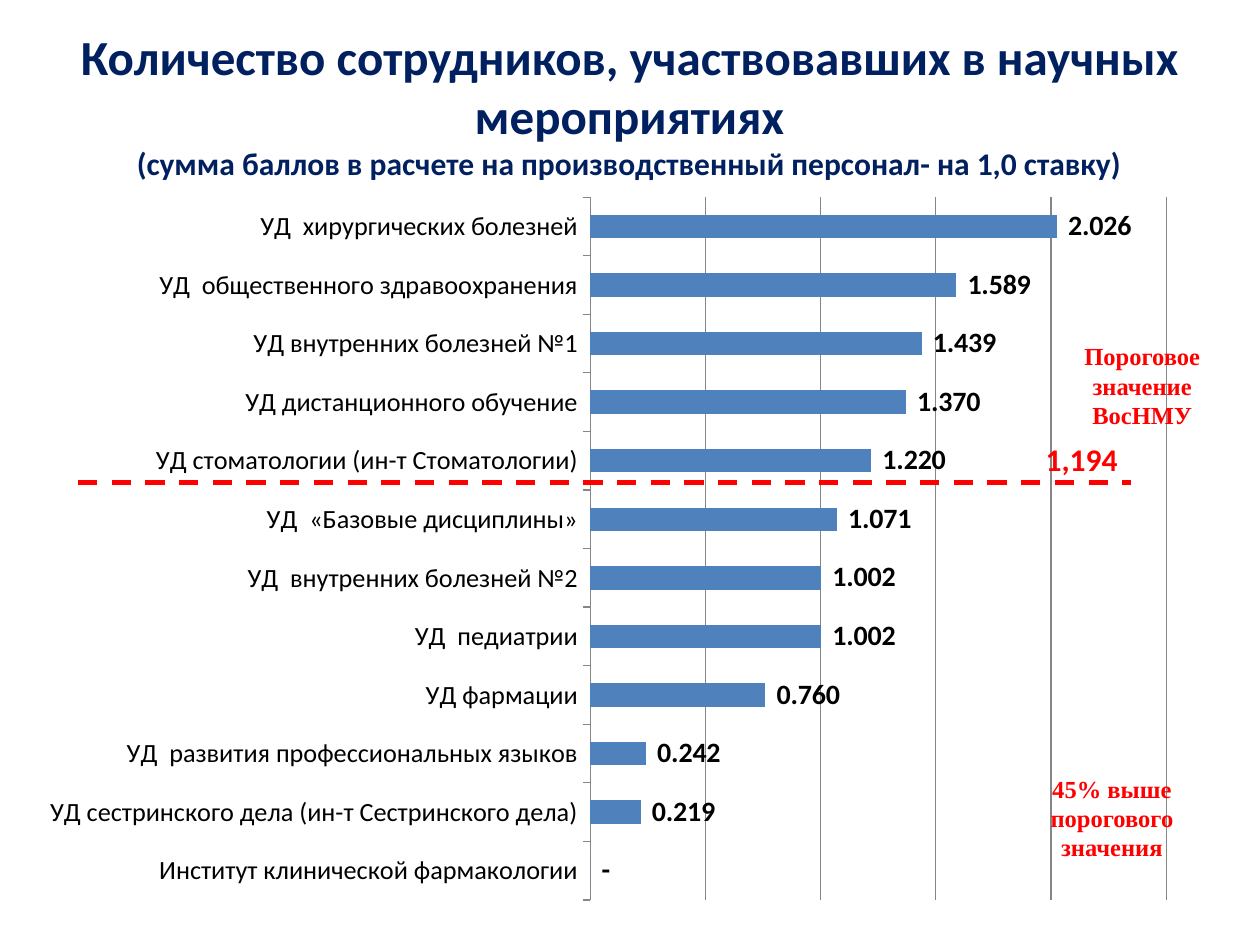
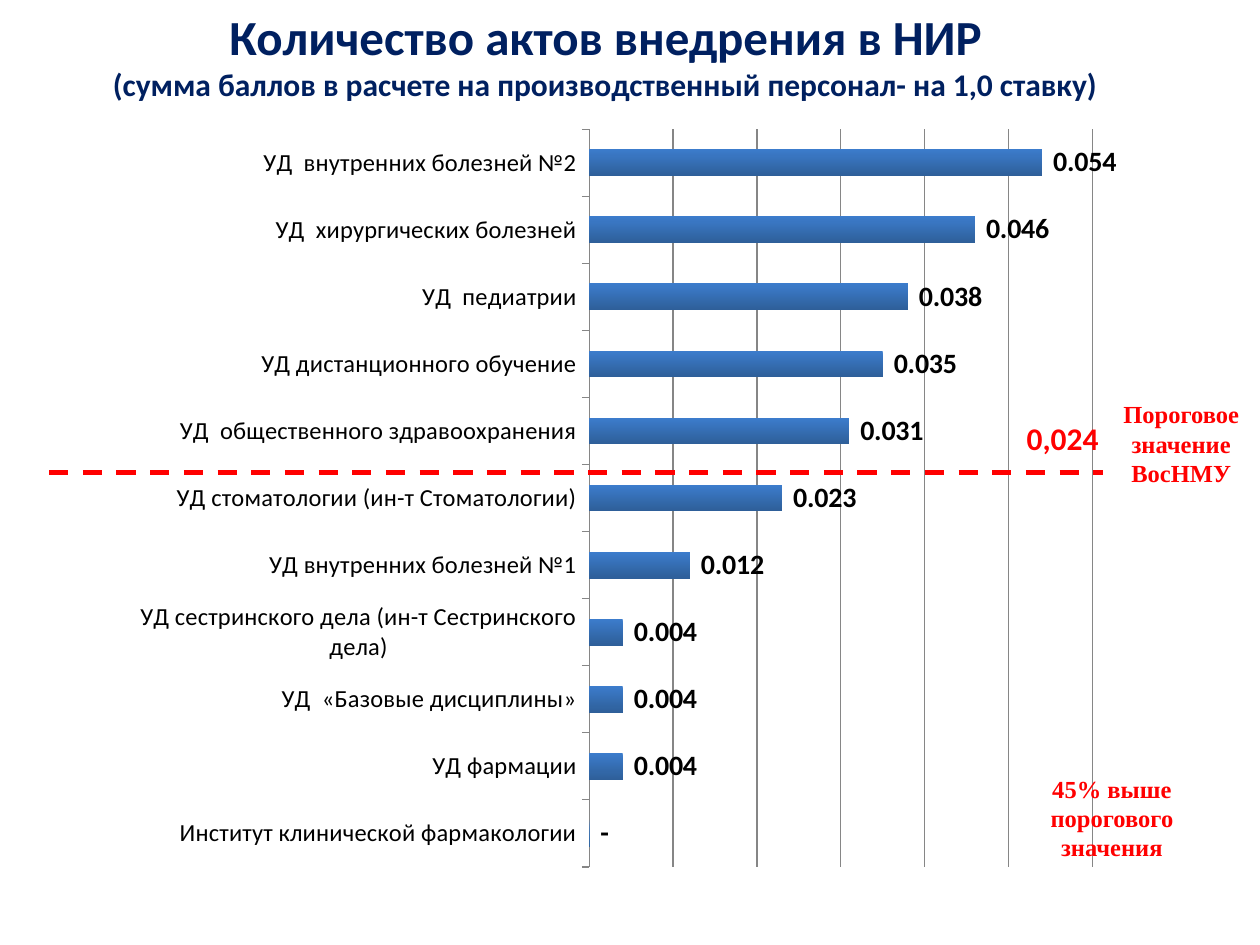
from collections import namedtuple

from lxml.etree import SubElement
from pptx import Presentation
from pptx.chart.data import CategoryChartData
from pptx.dml.color import RGBColor
from pptx.enum.chart import XL_CHART_TYPE as ChartType
from pptx.enum.chart import XL_LABEL_POSITION as LabelPosition
from pptx.enum.chart import XL_TICK_MARK as TickMark
from pptx.enum.dml import MSO_LINE as LineDash
from pptx.enum.shapes import MSO_CONNECTOR as Connector
from pptx.enum.text import MSO_ANCHOR as Anchor
from pptx.enum.text import MSO_AUTO_SIZE as AutoSize
from pptx.enum.text import PP_ALIGN as Align
from pptx.oxml.ns import qn
from pptx.util import Inches, Pt

# Shared look: a grid of 100 columns by 75 rows on a 10 x 7.5 inch slide
WIDTH, HEIGHT = Inches(10), Inches(7.5)
COLUMN, ROW = WIDTH / 100, HEIGHT / 75
NAVY, RED, BLACK = "002060", "FF0000", "000000"
GRID_GRAY, BAR_BLUE = "868686", "4F81BD"
BAR_GRADIENT = ("3C7CCC", "2E5F99")
SCORE_FORMAT = r'_-* #,##0.000_-;\-* #,##0.000_-;_-* "-"?'
SUBTITLE = "(сумма баллов в расчете на производственный персонал- на 1,0 ставку)"
THRESHOLD_CAPTION = "Пороговое значение ВосНМУ"
SHARE_ABOVE = "45% выше\nпорогового значения"
LINE_COLUMNS = 83.6

Box = namedtuple("Box", "left top width height")


def emu(box):
    return (round(box.left * COLUMN), round(box.top * ROW),
            round(box.width * COLUMN), round(box.height * ROW))


def rgb(value):
    return RGBColor.from_string(value)


def style(font, size, color, bold=False, name="Calibri"):
    font.size, font.bold, font.name = Pt(size), bold, name
    font.color.rgb = rgb(color)


def add_title(slide, box, heading):
    title = slide.shapes.title
    title.left, title.top, title.width, title.height = emu(box)
    frame = title.text_frame
    frame.text = f"{heading}\n{SUBTITLE}"
    frame.auto_size = AutoSize.NONE
    frame.vertical_anchor = Anchor.TOP
    for paragraph, size in zip(frame.paragraphs, (28, 18)):
        paragraph.alignment = Align.CENTER
        style(paragraph.font, size, NAVY, True)


def add_red_text(slide, box, text, size=14, name="Times New Roman",
                 align=Align.CENTER):
    frame = slide.shapes.add_textbox(*emu(box)).text_frame
    frame.word_wrap = True
    frame.text = text
    for paragraph in frame.paragraphs:
        paragraph.alignment = align
        style(paragraph.font, size, RED, True, name)


def add_threshold_line(slide, left, top):
    x, y, length, _ = emu(Box(left, top, LINE_COLUMNS, 0))
    threshold = slide.shapes.add_connector(Connector.STRAIGHT, x, y, x + length, y)
    threshold.line.color.rgb = rgb(RED)
    threshold.line.width = Pt(2.75)
    threshold.line.dash_style = LineDash.DASH
    SubElement(threshold._element.spPr, qn("a:effectLst"))


def set_plot_area(chart, shares):
    """Fix the inner plot area as shares of the chart's box."""
    plot_area = chart._chartSpace.chart.plotArea
    for old in plot_area.findall(qn("c:layout")):
        plot_area.remove(old)
    layout = SubElement(plot_area, qn("c:layout"))
    plot_area.insert(0, layout)
    manual = SubElement(layout, qn("c:manualLayout"))
    settings = [("layoutTarget", "inner"), ("xMode", "edge"), ("yMode", "edge")]
    settings += zip("xywh", shares)
    for tag, value in settings:
        SubElement(manual, qn(f"c:{tag}")).set("val", str(value))


def add_rating(slide, box, scores, plot_shares, top_score, step, label_size,
               gradient):
    # The first category of a bar chart stands at the bottom
    departments = list(reversed(scores.items()))
    data = CategoryChartData(number_format=SCORE_FORMAT)
    data.categories = [department for department, _ in departments]
    data.add_series("Series 1", [score for _, score in departments])
    chart = slide.shapes.add_chart(ChartType.BAR_CLUSTERED, *emu(box), data).chart
    chart.has_legend = chart.has_title = False
    style(chart.font, 10, BLACK)
    set_plot_area(chart, plot_shares)

    # Axes
    names, values = chart.category_axis, chart.value_axis
    style(names.tick_labels.font, label_size, BLACK)
    names.major_tick_mark = TickMark.OUTSIDE
    names.format.line.color.rgb = rgb(GRID_GRAY)
    values.visible = False
    values.minimum_scale, values.maximum_scale = 0, top_score
    values.major_unit = step
    values.has_major_gridlines = True
    values.major_gridlines.format.line.color.rgb = rgb(GRID_GRAY)

    # Bars and their values
    plot = chart.plots[0]
    plot.gap_width = 150
    plot.vary_by_categories = False
    fill = plot.series[0].format.fill
    if gradient:
        fill.gradient()
        fill.gradient_angle = 270
        for stop, color in zip(fill.gradient_stops, BAR_GRADIENT):
            stop.color.rgb = rgb(color)
    else:
        fill.solid()
        fill.fore_color.rgb = rgb(BAR_BLUE)
    plot.has_data_labels = True
    labels = plot.data_labels
    labels.show_value = True
    labels.position = LabelPosition.OUTSIDE_END
    labels.number_format = SCORE_FORMAT
    labels.number_format_is_linked = False
    style(labels.font, 16, BLACK, True)


def add_rating_slide(prs, heading, title_box, rating, line_at, threshold,
                     threshold_box, caption_at):
    slide = prs.slides.add_slide(prs.slide_layouts[5])
    add_title(slide, title_box, heading)
    add_rating(slide, **rating)
    add_threshold_line(slide, *line_at)
    add_red_text(slide, threshold_box, threshold, 18, "Calibri", Align.LEFT)
    add_red_text(slide, Box(*caption_at, 12.5, 8.1), THRESHOLD_CAPTION)
    add_red_text(slide, Box(82, 60.9, 12.5, 8.1), SHARE_ABOVE)


EVENT_SCORES = {
    "УД  хирургических болезней": 2.026,
    "УД  общественного здравоохранения": 1.589,
    "УД внутренних болезней №1": 1.439,
    "УД дистанционного обучение": 1.37,
    "УД стоматологии (ин-т Стоматологии)": 1.22,
    "УД  «Базовые дисциплины»": 1.071,
    "УД  внутренних болезней №2": 1.002,
    "УД  педиатрии": 1.002,
    "УД фармации": 0.76,
    "УД  развития профессиональных языков": 0.242,
    "УД сестринского дела (ин-т Сестринского дела)": 0.219,
    "Институт клинической фармакологии": 0,
}
ADOPTION_SCORES = {
    "УД  внутренних болезней №2": 0.054,
    "УД  хирургических болезней": 0.046,
    "УД  педиатрии": 0.038,
    "УД дистанционного обучение": 0.035,
    "УД  общественного здравоохранения": 0.031,
    "УД стоматологии (ин-т Стоматологии)": 0.023,
    "УД внутренних болезней №1": 0.012,
    "УД сестринского дела (ин-т Сестринского дела)": 0.004,
    "УД  «Базовые дисциплины»": 0.004,
    "УД фармации": 0.004,
    "Институт клинической фармакологии": 0,
}


def main():
    prs = Presentation()
    prs.slide_width, prs.slide_height = WIDTH, HEIGHT
    add_rating_slide(
        prs, "Количество сотрудников, участвовавших в научных мероприятиях",
        title_box=Box(2.3, 1.6, 95.3, 13.8),
        rating=dict(box=Box(3.9, 15.6, 91.4, 59.4), scores=EVENT_SCORES,
                    plot_shares=(0.47, 0, 0.5, 0.94), top_score=2.5, step=0.5,
                    label_size=15, gradient=False),
        line_at=(6.2, 38.3), threshold="1,194",
        threshold_box=Box(82, 34.4, 7.8, 4), caption_at=(84.4, 26.6))
    add_rating_slide(
        prs, "Количество актов внедрения в НИР",
        title_box=Box(0, 0, 96.1, 12.1),
        rating=dict(box=Box(8.6, 10.2, 80.5, 61.7), scores=ADOPTION_SCORES,
                    plot_shares=(0.475, 0, 0.497, 0.95), top_score=0.06,
                    step=0.01, label_size=14, gradient=True),
        line_at=(3.9, 37.5), threshold="0,024",
        threshold_box=Box(80.5, 32.8, 10.9, 4), caption_at=(87.5, 31.2))
    prs.save("out.pptx")


if __name__ == "__main__":
    main()
